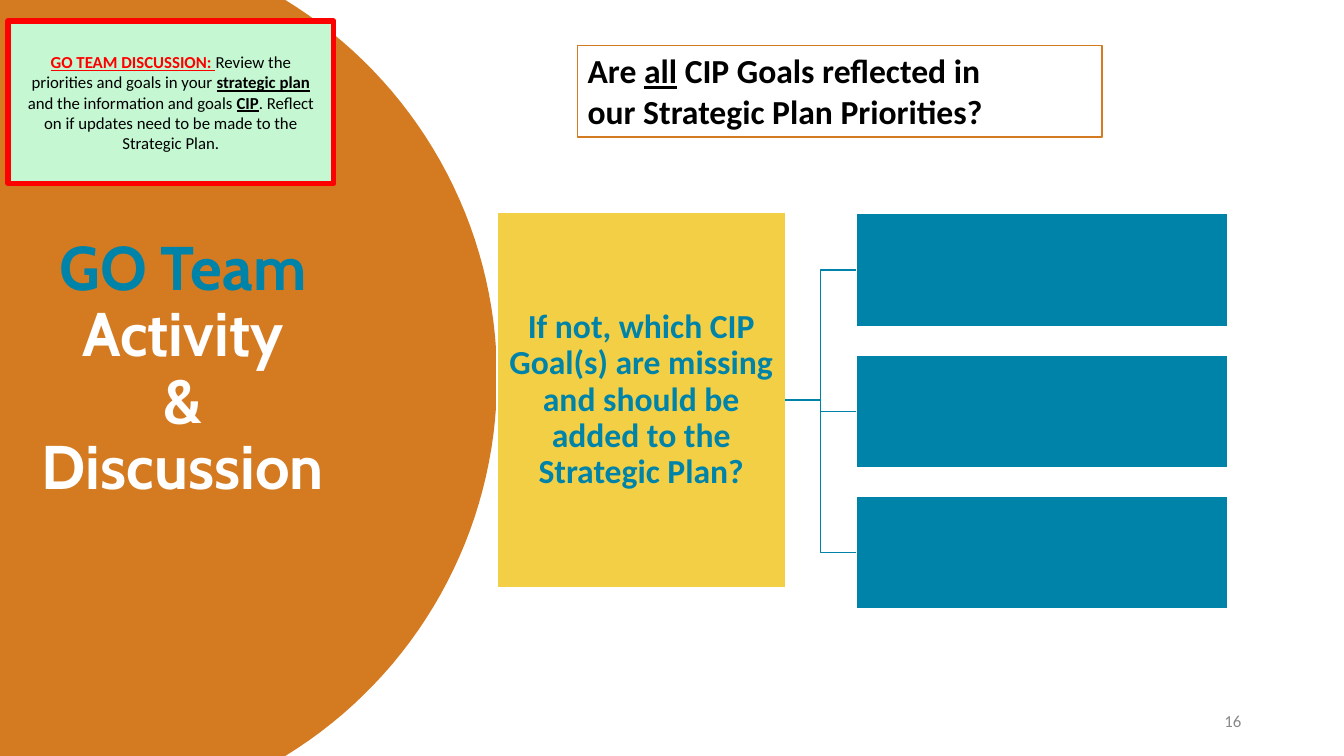
from dataclasses import dataclass
from math import asin, cos, hypot, sin

from lxml import etree
from pptx import Presentation
from pptx.dml.color import RGBColor
from pptx.enum.shapes import MSO_CONNECTOR, MSO_SHAPE
from pptx.enum.text import MSO_ANCHOR, PP_ALIGN
from pptx.oxml.ns import qn
from pptx.util import Pt

PX = 9144
RECTANGLE = MSO_SHAPE.RECTANGLE
ELBOW = MSO_CONNECTOR.ELBOW
MIDDLE, TOP = MSO_ANCHOR.MIDDLE, MSO_ANCHOR.TOP
LEFT, CENTER, RIGHT = PP_ALIGN.LEFT, PP_ALIGN.CENTER, PP_ALIGN.RIGHT
RIGHT_SIDE, LEFT_SIDE = 3, 1


@dataclass(frozen=True)
class Theme:
    orange: str = "D47B22"
    blue: str = "0083A9"
    yellow: str = "F3CF45"
    mint: str = "C4F7D2"
    red: str = "FF0000"
    white: str = "FFFFFF"
    black: str = "000000"
    grey: str = "898989"
    heading_font: str = "Cabin"
    body_font: str = "Calibri"
    title_size: int = 44
    question_size: int = 24
    small_size: int = 12


THEME = Theme()


def color(code):
    return RGBColor.from_string(code)


def px(*lengths):
    return [round(length * PX) for length in lengths]


def paint(shape, fill=None, line=None, weight=1):
    shape.shadow.inherit = False
    if fill:
        shape.fill.solid()
        shape.fill.fore_color.rgb = color(fill)
    else:
        shape.fill.background()
    if line:
        shape.line.color.rgb = color(line)
        shape.line.width = Pt(weight)
    else:
        shape.line.fill.background()


def add_box(slide, box, fill=None, line=None, weight=1):
    shape = slide.shapes.add_shape(RECTANGLE, *px(*box))
    paint(shape, fill, line, weight)
    return shape


def style(run, size, code, bold=False, underline=False, font=THEME.body_font):
    run.font.name = font
    run.font.size = Pt(size)
    run.font.color.rgb = color(code)
    run.font.bold = bold
    run.font.underline = underline


def set_frame(shape, anchor, side=10, edge=5):
    frame = shape.text_frame
    frame.word_wrap = True
    frame.vertical_anchor = anchor
    frame.margin_left = frame.margin_right = side * PX
    frame.margin_top = frame.margin_bottom = edge * PX
    return frame


def write_runs(paragraph, parts, size, align):
    paragraph.alignment = align
    for text, code, bold, underline in parts:
        run = paragraph.add_run()
        run.text = text
        style(run, size, code, bold, underline)


def title_panel(slide, box):
    left, top, width, height = box
    edge = left + 283
    bulge = left + width - edge
    half = height / 2
    radius = hypot(bulge, half) ** 2 / (2 * bulge)
    center_x = left + width - radius
    sweep = asin(half / radius)
    steps = 64
    angles = [sweep * (2 * step / steps - 1) for step in range(steps + 1)]
    curve = [
        px(center_x + radius * cos(angle), top + half + radius * sin(angle))
        for angle in angles
    ]
    outline = slide.shapes.build_freeform(*px(left, top))
    outline.add_line_segments(curve + [px(left, top + height)], close=True)
    paint(outline.convert_to_shape(), THEME.orange)

    title = slide.shapes.add_textbox(*px(left + 20, top + 211, 323, 312))
    paragraph = set_frame(title, MIDDLE).paragraphs[0]
    paragraph.text = "GO Team\vActivity\v&\vDiscussion"
    paragraph.alignment = CENTER
    paragraph.line_spacing = 0.9
    for index, run in enumerate(paragraph.runs):
        code = THEME.white if index else THEME.blue
        style(run, THEME.title_size, code, bold=True, font=THEME.heading_font)


def discussion_note(slide, box):
    note = add_box(slide, box, THEME.mint, THEME.red, 4)
    parts = [
        ("GO TEAM DISCUSSION: ", THEME.red, True, True),
        ("Review the priorities and goals in your ", THEME.black, False, False),
        ("strategic plan ", THEME.black, True, True),
        ("and the information and goals ", THEME.black, False, False),
        ("CIP", THEME.black, True, True),
        (". Reflect on if updates need to be made to the Strategic Plan.",
         THEME.black, False, False),
    ]
    frame = set_frame(note, MIDDLE, side=14)
    write_runs(frame.paragraphs[0], parts, THEME.small_size, CENTER)


def main_question(slide, box):
    question = add_box(slide, box, line=THEME.orange)
    frame = set_frame(question, TOP)
    first, second = frame.paragraphs[0], frame.add_paragraph()
    opening = [
        ("Are ", THEME.black, True, False),
        ("all", THEME.black, True, True),
        (" CIP Goals reflected in", THEME.black, True, False),
    ]
    closing = [("our Strategic Plan Priorities?", THEME.black, True, False)]
    write_runs(first, opening, THEME.question_size, LEFT)
    write_runs(second, closing, THEME.question_size, LEFT)


def join(slide, source, target):
    link = slide.shapes.add_connector(ELBOW, 0, 0, 0, 0)
    link.begin_connect(source, RIGHT_SIDE)
    link.end_connect(target, LEFT_SIDE)
    link.line.color.rgb = color(THEME.blue)
    link.line.width = Pt(1)
    etree.SubElement(link._element.spPr, qn("a:effectLst"))


def missing_goals(slide, box):
    left, top, width, height = box
    prompt = add_box(slide, (left, top - 1, 286, 372),
                     THEME.yellow, THEME.white)
    paragraph = set_frame(prompt, MIDDLE, side=2, edge=2).paragraphs[0]
    paragraph.line_spacing = 0.9
    wording = ("If not, which CIP Goal(s) are missing and should be "
               "added to the Strategic Plan?")
    write_runs(paragraph, [(wording, THEME.blue, True, False)],
               THEME.question_size, CENTER)

    answer_width, answer_height = 369, 112
    pitch = (height - answer_height) // 2
    for row in range(3):
        place = (left + width - answer_width, top + row * pitch,
                 answer_width, answer_height)
        answer = add_box(slide, place, THEME.blue, THEME.white)
        join(slide, prompt, answer)


def page_number(slide, box):
    number = slide.shapes.add_textbox(*px(*box))
    paragraph = set_frame(number, MIDDLE).paragraphs[0]
    paragraph.space_after = Pt(6)
    write_runs(paragraph, [("16", THEME.grey, False, False)],
               THEME.small_size, RIGHT)


def main():
    deck = Presentation()
    deck.slide_width, deck.slide_height = px(1333, 750)
    slide = deck.slides.add_slide(deck.slide_layouts[6])
    title_panel(slide, (0, 0, 493, 750))
    page_number(slide, (941, 695, 300, 40))
    discussion_note(slide, (8, 21, 323, 161))
    main_question(slide, (573, 45, 520, 91))
    missing_goals(slide, (493, 212, 725, 392))
    deck.save("out.pptx")


if __name__ == "__main__":
    main()
